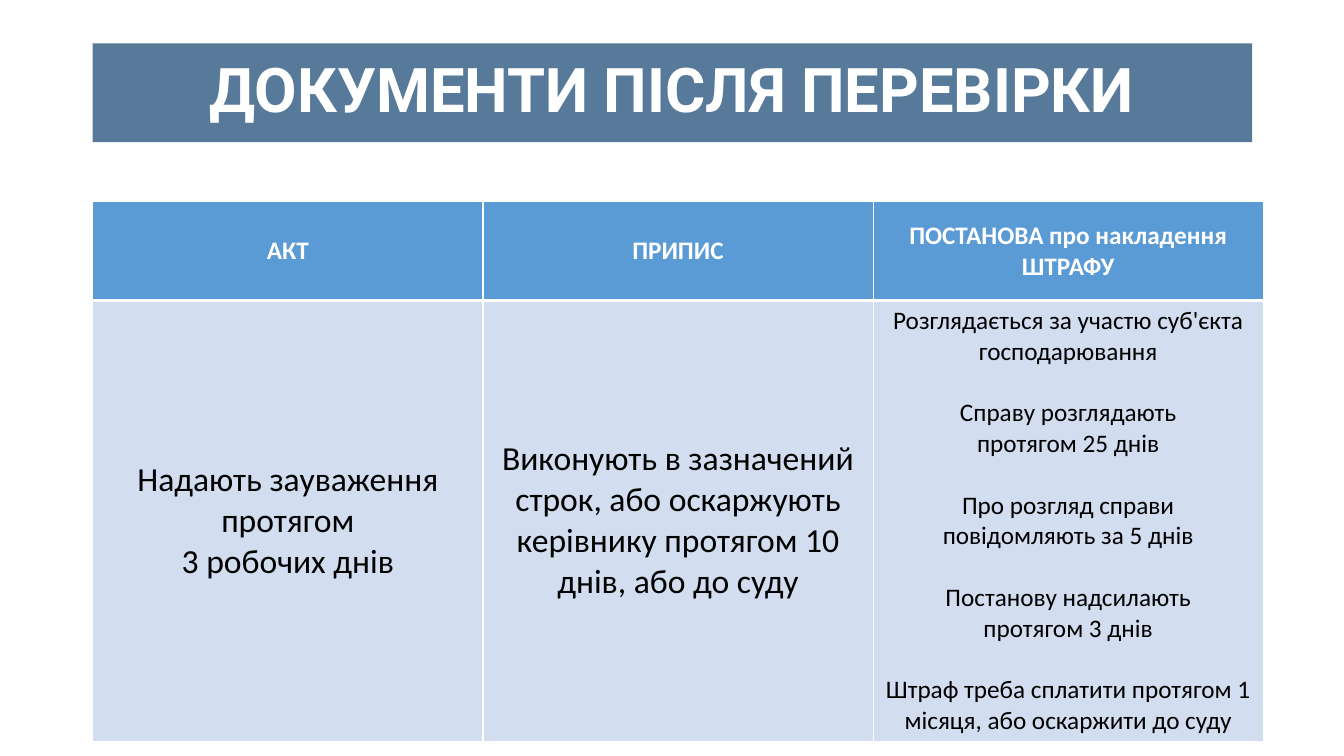
"""Builds the slide on documents issued after an inspection."""
from lxml.etree import SubElement as Sub
from pptx import Presentation
from pptx.dml.color import RGBColor as RGB
from pptx.enum.shapes import MSO_SHAPE as SHAPE
from pptx.enum.text import MSO_ANCHOR as ANCHOR, PP_ALIGN as ALIGN
from pptx.oxml.ns import qn
from pptx.util import Inches, Pt

NAVY = RGB(0x1F, 0x4E, 0x79)
BLUE = RGB(0x5B, 0x9B, 0xD5)
PALE = RGB(0xD2, 0xDE, 0xEF)
WHITE = RGB(0xFF, 0xFF, 0xFF)
BLACK = RGB(0x00, 0x00, 0x00)


def write(frame, *lines, size=18, face="Calibri", color=BLACK, bold=False, gap=0, lead=None):
    """Fills a text frame with centred paragraphs."""
    for i, line in enumerate(lines):
        para = frame.add_paragraph() if i else frame.paragraphs[0]
        para.text = line
        para.alignment = ALIGN.CENTER
        if lead:
            para.line_spacing = lead
        if i and gap:
            para.space_before = Pt(gap)
        for run in para.runs:
            font = run.font
            font.size, font.name, font.bold = Pt(size), face, bold
            font.color.rgb = color


def edge(cell, side, width):
    """Draws one white border of a cell."""
    props = cell._tc.get_or_add_tcPr()
    line = Sub(props, qn(f"a:ln{side}"), w=str(Pt(width)))
    Sub(Sub(line, qn("a:solidFill")), qn("a:srgbClr"), val=str(WHITE))


deck = Presentation()
deck.slide_width, deck.slide_height = Inches(13.33), Inches(7.5)
slide = deck.slides.add_slide(deck.slide_layouts[6])

title = slide.shapes.add_shape(SHAPE.RECTANGLE, Inches(0.92), Inches(0.43), Inches(11.5), Inches(0.98))
title.shadow.inherit = False
title.fill.solid()
title.fill.fore_color.rgb = NAVY
tint = title._element.spPr.find(qn("a:solidFill"))[0]
Sub(tint, qn("a:alpha"), val="75000")
title.line.fill.background()
title.text_frame.word_wrap = True
title.text_frame.vertical_anchor = ANCHOR.MIDDLE
write(title.text_frame, "ДОКУМЕНТИ ПІСЛЯ ПЕРЕВІРКИ", size=44, face="Roboto", color=WHITE, bold=True, lead=0.9)

heads = ["АКТ", "ПРИПИС", "ПОСТАНОВА про накладення ШТРАФУ"]
terms = [
    ["Надають зауваження протягом", "3 робочих днів"],
    ["Виконують в зазначений строк, або оскаржують керівнику протягом 10 днів, або до суду"],
    [
        "Розглядається за участю суб'єкта господарювання",
        "Справу розглядають\nпротягом 25 днів",
        "Про розгляд справи повідомляють за 5 днів",
        "Постанову надсилають\nпротягом 3 днів",
        "Штраф треба сплатити протягом 1 місяця, або оскаржити до суду",
    ],
]

table = slide.shapes.add_table(2, 3, Inches(0.92), Inches(2), Inches(11.61), Inches(5.34)).table
table.rows[0].height, table.rows[1].height = Inches(0.98), Inches(4.36)
for col, (head, term) in enumerate(zip(heads, terms)):
    table.columns[col].width = Inches(3.87)
    last = col == 2
    top, body = table.cell(0, col), table.cell(1, col)
    for cell, fill, rims in ((top, BLUE, (1, 1, 1, 3)), (body, PALE, (1, 1, 3, 1))):
        for side, width in zip("LRTB", rims):
            edge(cell, side, width)
        cell.fill.solid()
        cell.fill.fore_color.rgb = fill
        cell.vertical_anchor = ANCHOR.MIDDLE
    if last:
        body.vertical_anchor = ANCHOR.TOP
    write(top.text_frame, head, color=WHITE, bold=True)
    write(body.text_frame, *term, size=18 if last else 24, gap=22 if last else 0)

deck.save("out.pptx")
